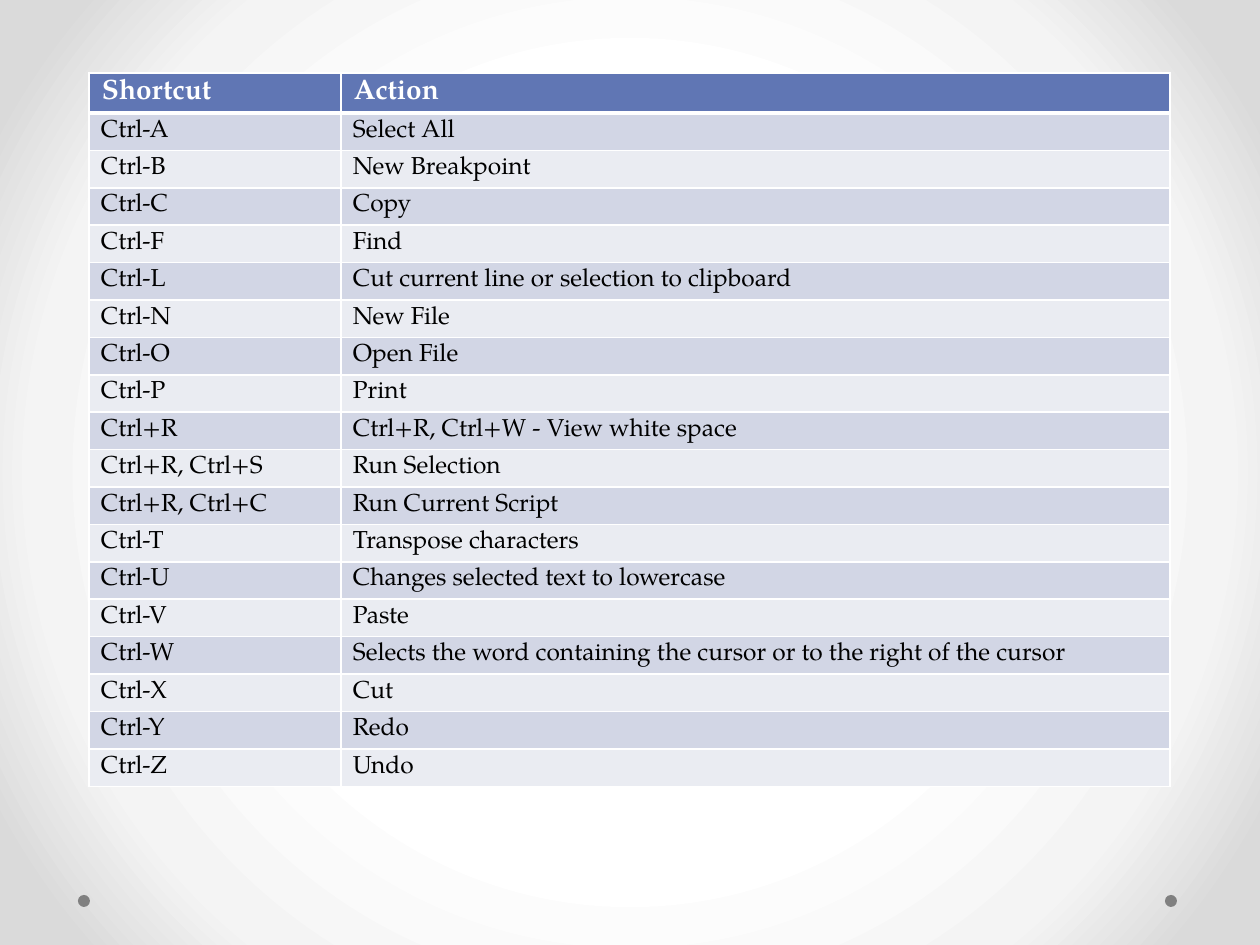
from lxml import etree
from pptx import Presentation
from pptx.dml.color import RGBColor
from pptx.enum.shapes import MSO_SHAPE
from pptx.enum.text import MSO_ANCHOR
from pptx.oxml import parse_xml
from pptx.oxml.ns import nsdecls, qn
from pptx.util import Pt

OVAL = MSO_SHAPE.OVAL
MIDDLE = MSO_ANCHOR.MIDDLE

# Content
HEADER = ("Shortcut", "Action")
SHORTCUTS = [
    ("Ctrl-A", "Select All"),
    ("Ctrl-B", "New Breakpoint"),
    ("Ctrl-C", "Copy"),
    ("Ctrl-F", "Find"),
    ("Ctrl-L", "Cut current line or selection to clipboard"),
    ("Ctrl-N", "New File"),
    ("Ctrl-O", "Open File"),
    ("Ctrl-P", "Print"),
    ("Ctrl+R", "Ctrl+R, Ctrl+W - View white space"),
    ("Ctrl+R, Ctrl+S", "Run Selection"),
    ("Ctrl+R, Ctrl+C", "Run Current Script"),
    ("Ctrl-T", "Transpose characters"),
    ("Ctrl-U", "Changes selected text to lowercase"),
    ("Ctrl-V", "Paste"),
    ("Ctrl-W", "Selects the word containing the cursor or to the right of the cursor"),
    ("Ctrl-X", "Cut"),
    ("Ctrl-Y", "Redo"),
    ("Ctrl-Z", "Undo"),
]

# Style and layout, in px
FONT = "TeX Gyre Pagella"
COLORS = {"header": "6076B4", "odd": "D2D6E5", "even": "EAECF2",
          "white": "FFFFFF", "black": "000000", "dot": "808080"}
BACKGROUND = [(50, "FFFFFF"), (76, "F4F4F4"), (92, "DADADA")]
LEFT, TOP, HEIGHT, HEADER_HEIGHT = 89, 73, 714, 40
COL_WIDTHS = (252, 829)
DOT_LEFTS, DOT_TOP, DOT_SIZE = (78, 1165), 895, 12


def px(n):
    return round(n * 914400 / 126)


def rgb(name):
    return RGBColor.from_string(COLORS[name])


def set_background(slide):
    slide.background.fill.solid()
    bg_pr = slide.background._cSld.bg.bgPr
    stops = "".join(f'<a:gs pos="{pos * 1000}"><a:srgbClr val="{color}"/></a:gs>'
                    for pos, color in BACKGROUND)
    grad = parse_xml(
        f'<a:gradFill {nsdecls("a")} rotWithShape="1"><a:gsLst>{stops}</a:gsLst>'
        '<a:path path="circle"><a:fillToRect l="50000" t="50000" r="50000" b="50000"/>'
        '</a:path></a:gradFill>')
    bg_pr.replace(bg_pr[0], grad)


def set_borders(cell, **widths):
    tc_pr = cell._tc.get_or_add_tcPr()
    for i, side in enumerate("LRTB"):
        ln = etree.Element(qn(f"a:ln{side}"), w=str(Pt(widths.get(side, 1))))
        fill = etree.SubElement(ln, qn("a:solidFill"))
        etree.SubElement(fill, qn("a:srgbClr"), val=COLORS["white"])
        tc_pr.insert(i, ln)


def put_text(cell, text, size=14, color="black", bold=False, margin=12):
    cell.vertical_anchor = MIDDLE
    cell.margin_left = cell.margin_right = px(margin)
    cell.margin_top = cell.margin_bottom = 0
    r = cell.text_frame.paragraphs[0].add_run()
    r.text = text
    r.font.name, r.font.size, r.font.bold = FONT, Pt(size), bold
    r.font.color.rgb = rgb(color)


prs = Presentation()
prs.slide_width, prs.slide_height = px(1260), px(945)
s = prs.slides.add_slide(prs.slide_layouts[6])
set_background(s)

# Corner dots
for left in DOT_LEFTS:
    dot = s.shapes.add_shape(OVAL, px(left), px(DOT_TOP), px(DOT_SIZE), px(DOT_SIZE))
    dot.shadow.inherit = False
    dot.fill.solid()
    dot.fill.fore_color.rgb = rgb("dot")
    dot.line.fill.background()

# Shortcut table
rows = [HEADER] + SHORTCUTS
table = s.shapes.add_table(len(rows), len(HEADER), px(LEFT), px(TOP),
                           px(sum(COL_WIDTHS)), px(HEIGHT)).table
for col, width in zip(table.columns, COL_WIDTHS):
    col.width = px(width)
row_height = (HEIGHT - HEADER_HEIGHT) / len(SHORTCUTS)
for i, row in enumerate(rows):
    table.rows[i].height = px(row_height if i else HEADER_HEIGHT)
    for j, text in enumerate(row):
        cell = table.cell(i, j)
        cell.fill.solid()
        if i == 0:
            cell.fill.fore_color.rgb = rgb("header")
            put_text(cell, text, size=16, color="white", bold=True, margin=13)
            set_borders(cell, B=3)
        else:
            cell.fill.fore_color.rgb = rgb("odd" if i % 2 else "even")
            put_text(cell, text)
            set_borders(cell, T=3 if i == 1 else 1)

prs.save("out.pptx")
